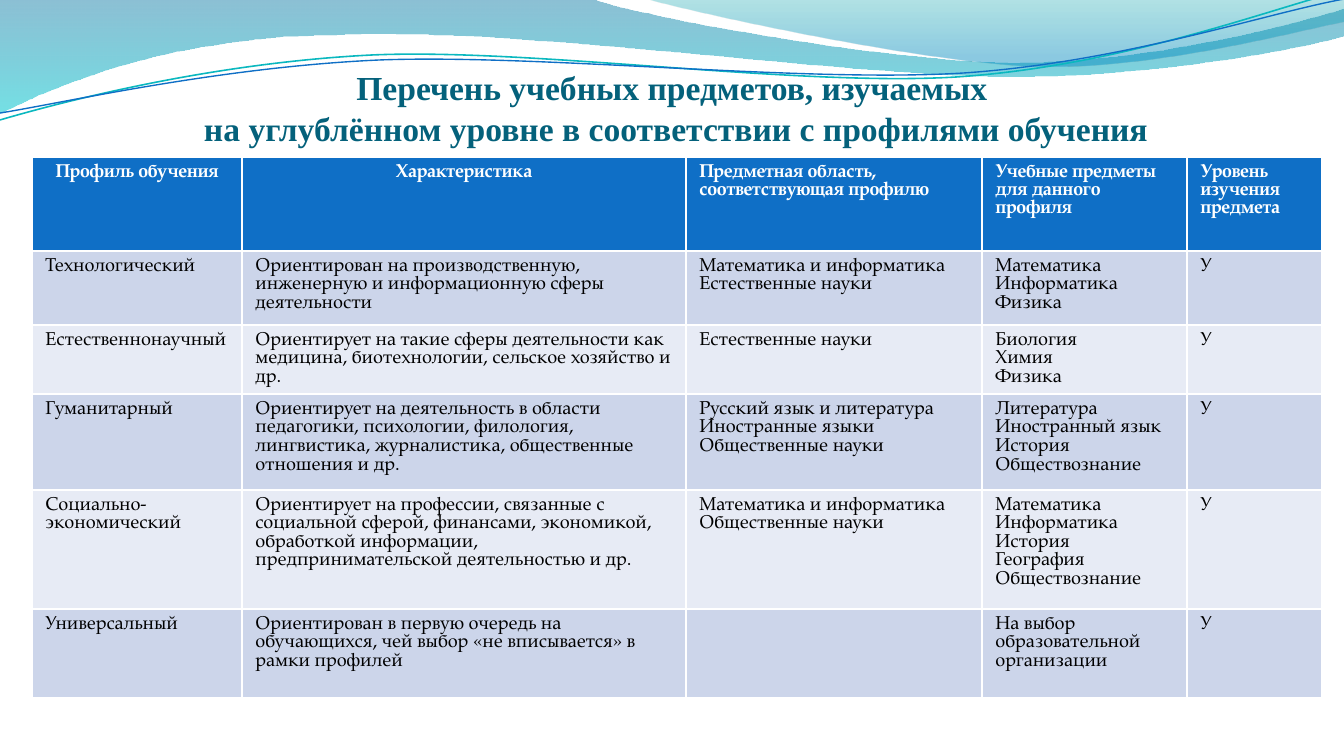
"""Build the slide listing advanced-level school subjects by study profile."""
import math
from dataclasses import dataclass
from typing import Any, NamedTuple

from lxml import etree
from pptx import Presentation
from pptx import util as u
from pptx.dml.color import RGBColor
from pptx.enum import text
from pptx.oxml import ns

SCALE = 9144000 / 1344
WIDTH, HEIGHT = 1344, 756
COLORS = {
    "heading": "04617B", "header": "0F6FC6", "odd": "CCD5EA", "even": "E7EBF5",
    "white": "FFFFFF", "black": "000000", "deep": "0074A1", "cyan": "00C6CF",
    "teal": "00A1A9", "sky": "008BBF", "turquoise": "0AB8BF",
}


class Stop(NamedTuple):
    color: str
    position: float
    opacity: int


class Frame(NamedTuple):
    left: int
    top: int
    width: int
    height: int


@dataclass
class Wave:
    frame: Frame
    start: tuple[int, int]
    segments: list[tuple[int, ...]]
    stops: tuple[Stop, ...] = ()
    line: str = ""
    weight: float = 0
    rotation: float = 0


@dataclass
class Profile:
    name: str
    description: str
    areas: str
    subjects: str
    height: int
    level: str = "У"


WAVES = [
    Wave(Frame(-1, -1, 1347, 114), (0, 0),
         [(591, -1), (640, 17, 892, 63, 1019, 63), (1146, 63, 1288, 26, 1344, 9),
          (1345, 36), (1321, 44, 1169, 77, 1003, 77), (833, 75, 513, 28, 345, 35),
          (173, 36, 62, 83, -1, 114), (0, 0)],
         stops=(Stop("deep", 0, 45), Stop("cyan", 1, 55))),
    Wave(Frame(644, -1, 700, 70), (644, -1),
         [(684, 11, 917, 62, 1034, 66), (1150, 70, 1292, 32, 1344, 22), (1344, 0), (644, -1)],
         stops=(Stop("teal", 0, 30), Stop("sky", 0.8, 45))),
    Wave(Frame(-3, 23, 1347, 71), (0, 120),
         [(65, 101, 212, 63, 372, 55), (532, 48, 796, 87, 957, 77),
          (1120, 66, 1262, 12, 1341, -9)], line="turquoise", weight=0.85, rotation=357.3),
    Wave(Frame(-3, 31, 1348, 58), (0, 113),
         [(63, 103, 220, 67, 380, 60), (542, 54, 802, 83, 964, 73),
          (1124, 62, 1267, 13, 1344, -1)], line="header", weight=0.75, rotation=357.3),
]
COLUMNS = [210, 444, 296, 205, 135]
HEADER = Profile("Профиль обучения", "Характеристика", "Предметная область, соответствующая профилю",
                 "Учебные предметы для данного профиля", 94, "Уровень изучения предмета")
PROFILES = [
    Profile("Технологический",
            "Ориентирован на производственную, инженерную и информационную сферы деятельности",
            "Математика и информатика\nЕстественные науки", "Математика\nИнформатика\nФизика", 74),
    Profile("Естественнонаучный",
            "Ориентирует на такие сферы деятельности как медицина, биотехнологии, "
            "сельское хозяйство и др.",
            "Естественные науки", "Биология\nХимия\nФизика", 69),
    Profile("Гуманитарный",
            "Ориентирует на деятельность в области педагогики, психологии, филология, "
            "лингвистика, журналистика, общественные отношения и др.",
            "Русский язык и литература\nИностранные языки\nОбщественные науки",
            "Литература\nИностранный язык\nИстория\nОбществознание", 96),
    Profile("Социально-экономический",
            "Ориентирует на профессии, связанные с социальной сферой, финансами, экономикой, "
            "обработкой информации, предпринимательской деятельностью и др.",
            "Математика и информатика\nОбщественные науки",
            "Математика\nИнформатика\nИстория\nГеография\nОбществознание", 119),
    Profile("Универсальный",
            "Ориентирован в первую очередь на обучающихся, чей выбор «не вписывается» "
            "в рамки профилей", "", "На выбор образовательной организации", 89),
]


def px(length: float) -> u.Emu:
    return u.Emu(round(length * SCALE))


def rgb(name: str) -> RGBColor:
    return RGBColor.from_string(COLORS[name])


def apply(target: Any, values: dict[str, Any]) -> None:
    for attribute, value in values.items():
        setattr(target, attribute, value)


def add_command(outline: Any, kind: str, points: tuple[int, ...], wave: Wave) -> None:
    command = etree.SubElement(outline, ns.qn(f"a:{kind}"))
    left, top, width, height = wave.frame
    turn = math.radians(-wave.rotation)
    for x, y in zip(points[::2], points[1::2]):
        dx, dy = x - left - width / 2, y - top - height / 2
        local_x = dx * math.cos(turn) - dy * math.sin(turn) + width / 2
        local_y = dx * math.sin(turn) + dy * math.cos(turn) + height / 2
        etree.SubElement(command, ns.qn("a:pt"), x=str(int(px(local_x))), y=str(int(px(local_y))))


def draw_wave(slide: Any, wave: Wave) -> None:
    left, top, width, height = wave.frame
    builder = slide.shapes.build_freeform(px(left), px(top), scale=1.0)
    builder.add_line_segments([(px(left + width), px(top + height))], close=False)
    ribbon = builder.convert_to_shape()
    outline = next(ribbon.element.spPr.iter(ns.qn("a:path")))
    for command in list(outline):
        outline.remove(command)
    add_command(outline, "moveTo", wave.start, wave)
    for segment in wave.segments:
        add_command(outline, "lnTo" if len(segment) == 2 else "cubicBezTo", segment, wave)
    ribbon.rotation = wave.rotation
    ribbon.shadow.inherit = False
    if not wave.stops:
        ribbon.fill.background()
        ribbon.line.color.rgb = rgb(wave.line)
        ribbon.line.width = u.Pt(wave.weight)
        return
    etree.SubElement(outline, ns.qn("a:close"))
    ribbon.line.fill.background()
    ribbon.fill.gradient()
    ribbon.fill.gradient_angle = 270
    for mark, stop in zip(ribbon.fill.gradient_stops, wave.stops):
        mark.color.rgb = rgb(stop.color)
        mark.position = stop.position
    for tint, stop in zip(ribbon.element.spPr.iter(ns.qn("a:srgbClr")), wave.stops):
        etree.SubElement(tint, ns.qn("a:alpha"), val=str(stop.opacity * 1000))


def draw_heading(slide: Any) -> None:
    heading = slide.shapes.title
    slide.shapes.element.append(heading.element)
    apply(heading, {"left": px(67), "top": px(63), "width": px(1210), "height": px(85)})
    frame = heading.text_frame
    frame.text = ("Перечень учебных предметов, изучаемых\v"
                  " на углублённом уровне в соответствии с профилями обучения")
    apply(frame, {"margin_left": 0, "margin_right": 0, "margin_top": px(7), "margin_bottom": 0,
                  "word_wrap": True, "auto_size": text.MSO_AUTO_SIZE.NONE,
                  "vertical_anchor": text.MSO_ANCHOR.BOTTOM})
    line = frame.paragraphs[0]
    line.alignment = text.PP_ALIGN.CENTER
    for run in line.runs:
        apply(run.font, {"name": "Times New Roman", "size": u.Pt(18), "bold": True})
        run.font.color.rgb = rgb("heading")


def draw_cell(cell: Any, content: str, row: int, column: int) -> None:
    is_header = row == 0
    cell.text = content
    cell.fill.solid()
    cell.fill.fore_color.rgb = rgb("header" if is_header else "odd" if row % 2 else "even")
    centered = is_header and column < 2
    for entry in cell.text_frame.paragraphs:
        entry.alignment = text.PP_ALIGN.CENTER if centered else text.PP_ALIGN.LEFT
        entry.font.size = u.Pt(10)
        for run in entry.runs:
            apply(run.font, {"name": "TeX Gyre Pagella", "size": u.Pt(10), "bold": is_header})
            run.font.color.rgb = rgb("white" if is_header else "black")


def draw_profiles(slide: Any, profiles: list[Profile]) -> None:
    total = sum(profile.height for profile in profiles)
    grid = slide.shapes.add_table(len(profiles), len(COLUMNS), px(32), px(157),
                                  px(sum(COLUMNS)), px(total)).table
    for column, width in zip(grid.columns, COLUMNS):
        column.width = px(width)
    for row, profile in enumerate(profiles):
        grid.rows[row].height = px(profile.height)
        contents = (profile.name, profile.description, profile.areas,
                    profile.subjects, profile.level)
        for column, content in enumerate(contents):
            draw_cell(grid.cell(row, column), content, row, column)


def main() -> None:
    deck = Presentation()
    apply(deck, {"slide_width": px(WIDTH), "slide_height": px(HEIGHT)})
    slide = deck.slides.add_slide(deck.slide_layouts[5])
    for wave in WAVES:
        draw_wave(slide, wave)
    draw_heading(slide)
    draw_profiles(slide, [HEADER, *PROFILES])
    deck.save("out.pptx")


if __name__ == "__main__":
    main()
